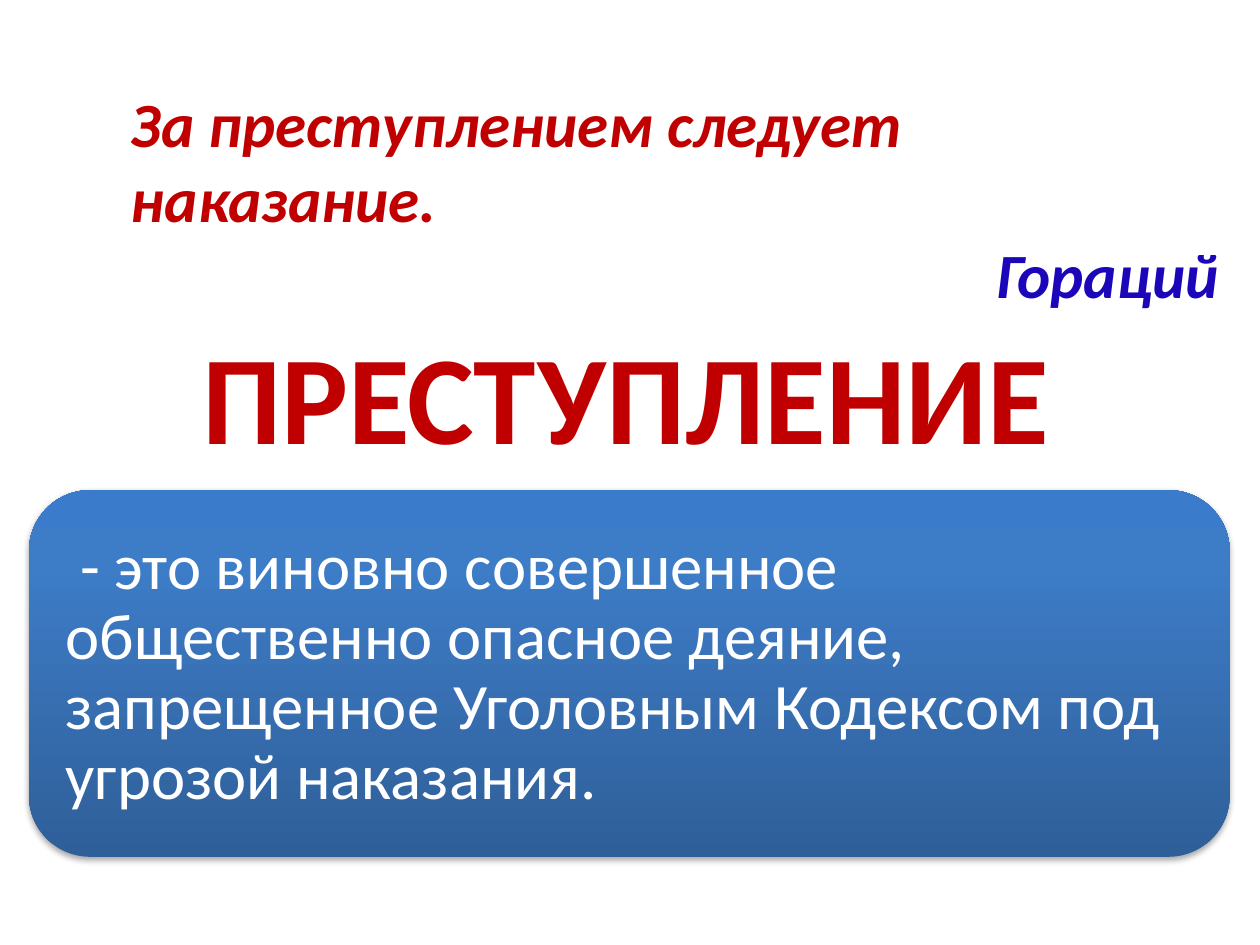
"""Build a slide that defines crime, with an epigraph from Horace."""
import pptx
import pptx.util
import pptx.dml.color
import pptx.enum.shapes
import pptx.enum.text
import pptx.oxml
import pptx.oxml.ns

Inches = pptx.util.Inches
Pt = pptx.util.Pt
ALIGN = pptx.enum.text.PP_ALIGN
ANCHOR = pptx.enum.text.MSO_ANCHOR


def color(value):
    return pptx.dml.color.RGBColor.from_string(value)


def write(paragraph, text, size=36, fill="C00000", bold=True, italic=False, align=ALIGN.LEFT):
    paragraph.alignment = align
    run = paragraph.add_run()
    run.text = text
    run.font.name = "Calibri"
    run.font.size = Pt(size)
    run.font.bold = bold
    run.font.italic = italic
    run.font.color.rgb = color(fill)


presentation = pptx.Presentation()
presentation.slide_width = Inches(10)
presentation.slide_height = Inches(7.5)
slide = presentation.slides.add_slide(presentation.slide_layouts[6])

term = slide.shapes.add_textbox(Inches(0.47), Inches(2.5), Inches(9), Inches(1.25)).text_frame
term.word_wrap = True
term.vertical_anchor = ANCHOR.MIDDLE
write(term.paragraphs[0], "ПРЕСТУПЛЕНИЕ", size=72, align=ALIGN.CENTER)

definition = slide.shapes.add_shape(
    pptx.enum.shapes.MSO_SHAPE.ROUNDED_RECTANGLE,
    Inches(0.23), Inches(3.89), Inches(9.53), Inches(2.91))
definition.line.fill.background()
definition.shadow.inherit = False
properties = definition.element.spPr
namespace = pptx.oxml.ns.nsdecls("a")
stops = "".join(
    f'<a:gs pos="{position * 1000}"><a:srgbClr val="{value}"/></a:gs>'
    for position, value in [(0, "2F5F99"), (80, "3D7CC7"), (100, "3A7CCB")])
gradient = pptx.oxml.parse_xml(
    f'<a:gradFill {namespace} rotWithShape="1"><a:gsLst>{stops}</a:gsLst>'
    '<a:lin ang="16200000" scaled="0"/></a:gradFill>')
properties.find(pptx.oxml.ns.qn("a:prstGeom")).addnext(gradient)
shadow = pptx.oxml.parse_xml(
    f'<a:outerShdw {namespace} blurRad="{Pt(3.1)}" dist="{Pt(1.8)}" dir="5400000" rotWithShape="0">'
    '<a:srgbClr val="000000"><a:alpha val="35000"/></a:srgbClr></a:outerShdw>')
properties.find(pptx.oxml.ns.qn("a:effectLst")).append(shadow)

meaning = definition.text_frame
meaning.word_wrap = True
meaning.vertical_anchor = ANCHOR.MIDDLE
meaning.margin_left = meaning.margin_right = Inches(0.15)
meaning.margin_top = meaning.margin_bottom = Inches(0.15)
meaning.paragraphs[0].line_spacing = 0.9
write(meaning.paragraphs[0],
      " - это виновно совершенное общественно опасное деяние, "
      "запрещенное Уголовным Кодексом под угрозой наказания.",
      size=37, fill="FFFFFF", bold=False)

epigraph = slide.shapes.add_textbox(Inches(0.94), Inches(0.62), Inches(8.83), Inches(1.92)).text_frame
epigraph.word_wrap = True
epigraph.auto_size = pptx.enum.text.MSO_AUTO_SIZE.SHAPE_TO_FIT_TEXT
write(epigraph.paragraphs[0], "За преступлением следует наказание.", italic=True)
write(epigraph.add_paragraph(), "Гораций", fill="1B06BA", italic=True, align=ALIGN.RIGHT)

presentation.save("out.pptx")
